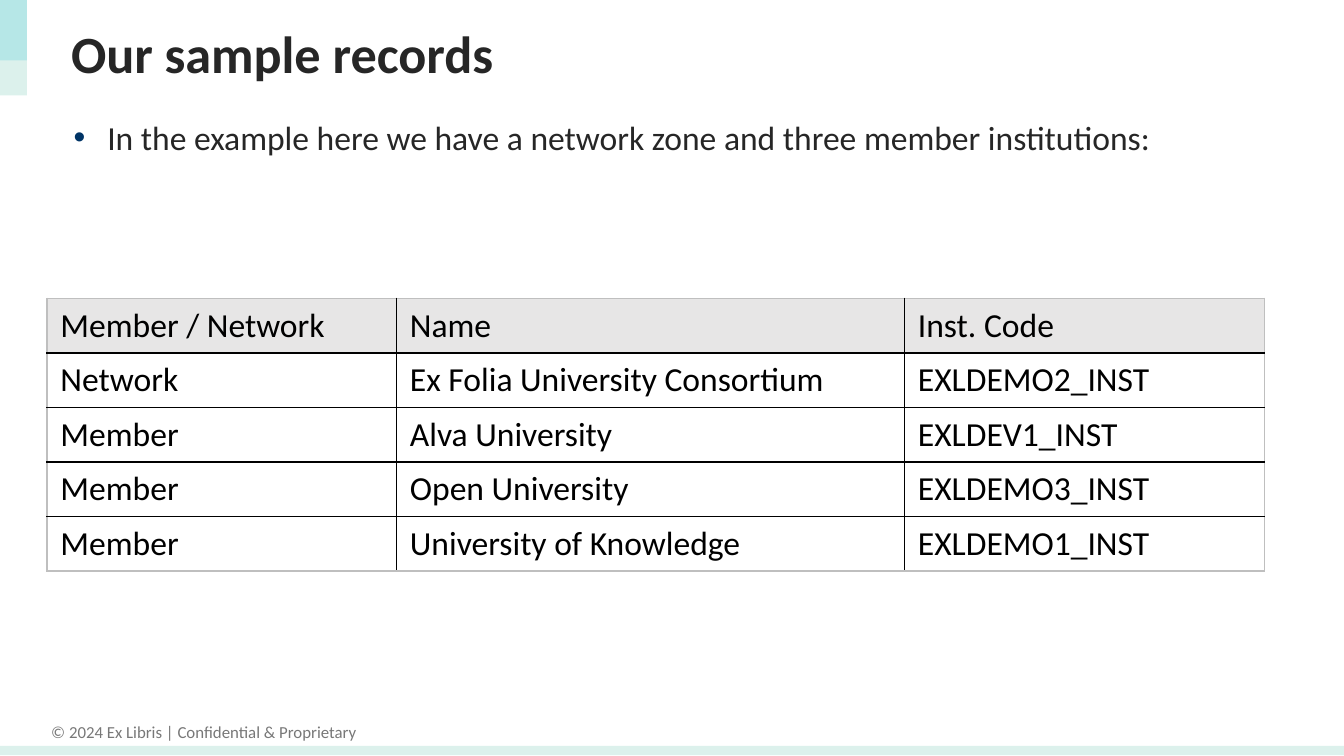
from dataclasses import dataclass
from typing import Optional

import pptx
import pptx.dml.color
import pptx.enum.shapes
import pptx.enum.text
import pptx.oxml
import pptx.oxml.ns
import pptx.util
from lxml import etree

Inches, Pt = pptx.util.Inches, pptx.util.Pt
RGB = pptx.dml.color.RGBColor.from_string
ALIGN, ANCHOR = pptx.enum.text.PP_ALIGN, pptx.enum.text.MSO_ANCHOR
qn = pptx.oxml.ns.qn


@dataclass(frozen=True)
class Theme:
    font: str = "Calibri"
    title_size: int = 28
    body_size: int = 18
    footer_size: int = 9
    ink: str = "262626"
    black: str = "000000"
    grey: str = "787878"
    frame: str = "BFBFBF"
    header: str = "E7E6E6"
    mint: str = "DCF1EC"
    teal: str = "50CFDA"
    bullet: str = "003466"


@dataclass(frozen=True)
class Bar:
    top: float
    width: float
    height: float
    color: str
    alpha: Optional[int] = None


@dataclass(frozen=True)
class Label:
    text: str
    box: tuple[float, float, float, float]
    size: int
    color: str
    bold: bool = False
    anchor: ANCHOR = ANCHOR.TOP
    align: ALIGN = ALIGN.LEFT
    wrap: bool = True
    bullet: bool = False


T = Theme()
BARS = [
    Bar(5.55, 10, 0.07, T.mint),
    Bar(0, 0.2, 0.71, T.mint),
    Bar(0, 0.2, 0.45, T.teal, alpha=27),
]
LABELS = [
    Label("© 2024 Ex Libris | Confidential & Proprietary", (0.27, 5.32, 2.49, 0.25),
          T.footer_size, T.grey, align=ALIGN.CENTER, wrap=False),
    Label("Our sample records", (0.43, 0.08, 9.21, 0.63),
          T.title_size, T.ink, bold=True, anchor=ANCHOR.MIDDLE),
    Label("In the example here we have a network zone and three member institutions:",
          (0.45, 0.82, 9.19, 1.07), T.body_size, T.ink, bullet=True),
]
COLUMNS = [2.6, 3.78, 2.68]
RECORDS = [
    ("Member / Network", "Name", "Inst. Code"),
    ("Network", "Ex Folia University Consortium", "EXLDEMO2_INST"),
    ("Member", "Alva University", "EXLDEV1_INST"),
    ("Member", "Open University", "EXLDEMO3_INST"),
    ("Member", "University of Knowledge", "EXLDEMO1_INST"),
]


def add_run(p, text: str, size: int, color: str, bold: bool = False) -> None:
    r = p.add_run()
    r.text = text
    r.font.name, r.font.size, r.font.bold = T.font, Pt(size), bold
    r.font.color.rgb = RGB(color)


def draw_bar(s, bar: Bar) -> None:
    sp = s.shapes.add_shape(pptx.enum.shapes.MSO_SHAPE.RECTANGLE, Inches(0),
                            Inches(bar.top), Inches(bar.width), Inches(bar.height))
    sp.shadow.inherit = False
    sp.line.fill.background()
    sp.fill.solid()
    sp.fill.fore_color.rgb = RGB(bar.color)
    if bar.alpha is not None:
        color = sp._element.spPr.find(qn("a:solidFill"))[0]
        etree.SubElement(color, qn("a:alpha"), val=str(bar.alpha * 1000))


def add_bullet(p) -> None:
    pPr = p._p.get_or_add_pPr()
    pPr.set("marL", str(Inches(0.25)))
    pPr.set("indent", str(-Inches(0.25)))
    color = etree.SubElement(pPr, qn("a:buClr"))
    etree.SubElement(color, qn("a:srgbClr"), val=T.bullet)
    etree.SubElement(pPr, qn("a:buFont"), typeface="Arial")
    etree.SubElement(pPr, qn("a:buChar"), char="•")


def draw_label(s, label: Label) -> None:
    tf = s.shapes.add_textbox(*map(Inches, label.box)).text_frame
    tf.word_wrap = label.wrap
    tf.vertical_anchor = label.anchor
    p = tf.paragraphs[0]
    p.alignment = label.align
    if label.bullet:
        add_bullet(p)
    add_run(p, label.text, label.size, label.color, label.bold)


def add_borders(cell, outer: dict[str, bool]) -> None:
    """Outer sides take the frame colour, inner sides are black."""
    tcPr = cell._tc.get_or_add_tcPr()
    for i, (side, is_outer) in enumerate(outer.items()):
        ln = etree.Element(qn(f"a:ln{side}"), w=str(Pt(1)))
        fill = etree.SubElement(ln, qn("a:solidFill"))
        etree.SubElement(fill, qn("a:srgbClr"), val=T.frame if is_outer else T.black)
        tcPr.insert(i, ln)


def draw_table(s, records: list[tuple[str, ...]], columns: list[float]) -> None:
    last_row, last_col = len(records) - 1, len(columns) - 1
    table = s.shapes.add_table(len(records), len(columns), Inches(0.35), Inches(2.22),
                               Inches(sum(columns)), Inches(2.03)).table
    table.first_row = table.horz_banding = False
    for col, width in zip(table.columns, columns):
        col.width = Inches(width)
    for i, record in enumerate(records):
        for j, text in enumerate(record):
            cell = table.cell(i, j)
            if i == 0:
                cell.fill.solid()
                cell.fill.fore_color.rgb = RGB(T.header)
            else:
                cell.fill.background()
            add_borders(cell, {"L": j == 0, "R": j == last_col,
                               "T": i == 0, "B": i == last_row})
            add_run(cell.text_frame.paragraphs[0], text, T.body_size, T.black)


def main() -> None:
    prs = pptx.Presentation()
    prs.slide_width = Inches(10)
    prs.slide_height = prs.slide_width * 9 // 16
    s = prs.slides.add_slide(prs.slide_layouts[6])

    # Edge decoration
    for bar in BARS:
        draw_bar(s, bar)

    # Footer, title and introduction
    for label in LABELS:
        draw_label(s, label)

    # Institutions
    draw_table(s, RECORDS, COLUMNS)
    prs.save("out.pptx")


if __name__ == "__main__":
    main()
